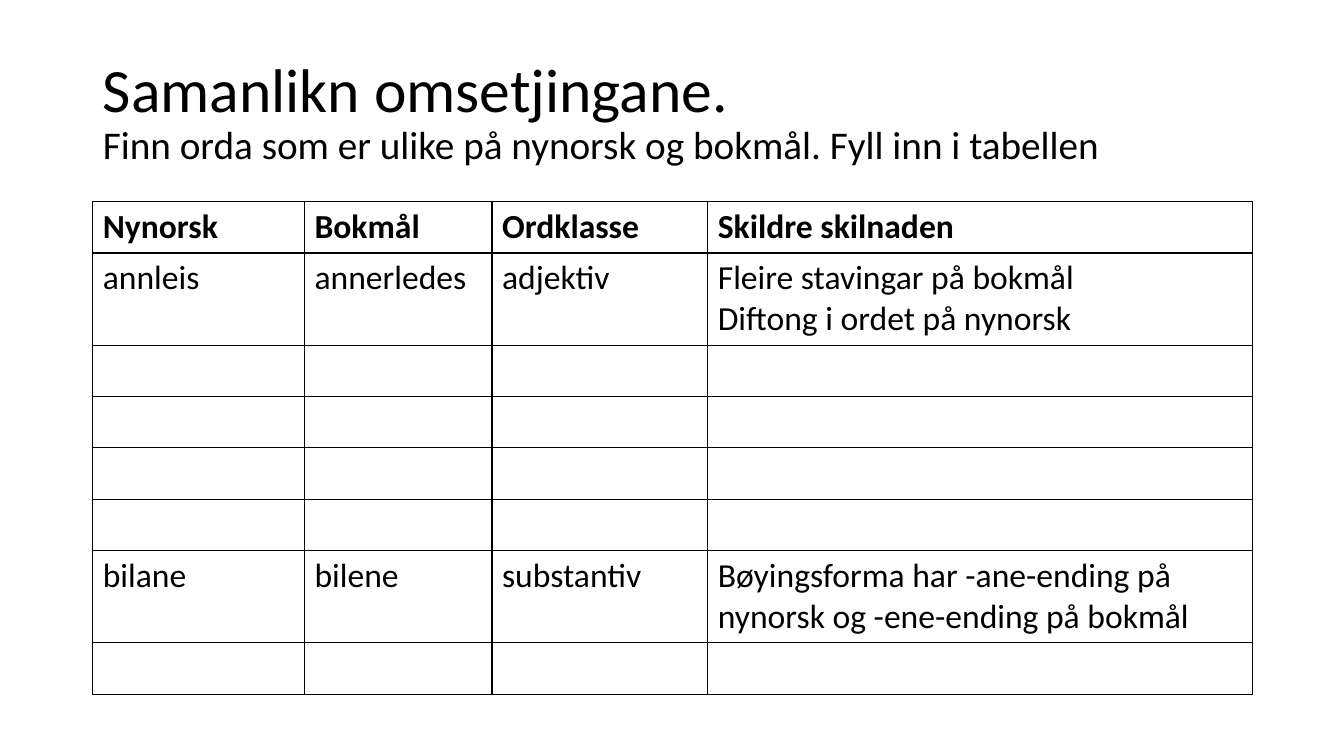
from dataclasses import dataclass

from lxml.etree import SubElement
from pptx import Presentation
from pptx.dml.color import RGBColor
from pptx.enum.text import MSO_ANCHOR, PP_ALIGN
from pptx.oxml.ns import qn
from pptx.slide import Slide
from pptx.table import _Cell
from pptx.text.text import _Paragraph
from pptx.util import Inches, Pt


@dataclass(frozen=True)
class Theme:
    font: str = "Calibri"
    ink: str = "000000"
    heading: int = 44
    instruction: int = 28
    entry: int = 24
    border: int = 1


@dataclass(frozen=True)
class WordRow:
    nynorsk: str = ""
    bokmal: str = ""
    word_class: str = ""
    difference: str = ""
    bold: bool = False
    height: float = 0.51

    def entries(self) -> tuple[str, ...]:
        return self.nynorsk, self.bokmal, self.word_class, self.difference


THEME = Theme()
COLUMN_WIDTHS = (2.1, 1.86, 2.14, 5.4)
LEFT, WIDTH = 0.92, sum(COLUMN_WIDTHS)
WORD_ROWS = [
    WordRow("Nynorsk", "Bokmål", "Ordklasse", "Skildre skilnaden", bold=True),
    WordRow("annleis", "annerledes", "adjektiv",
            "Fleire stavingar på bokmål\nDiftong i ordet på nynorsk", height=0.91),
    *[WordRow()] * 4,
    WordRow("bilane", "bilene", "substantiv",
            "Bøyingsforma har -ane-ending på nynorsk og -ene-ending på bokmål",
            height=0.91),
    WordRow(),
]


def style_paragraph(paragraph: _Paragraph, size: int, bold: bool = False) -> None:
    paragraph.alignment = PP_ALIGN.LEFT
    paragraph.font.name = THEME.font
    paragraph.font.size = Pt(size)
    paragraph.font.bold = bold
    paragraph.font.color.rgb = RGBColor.from_string(THEME.ink)


def draw_borders(cell: _Cell) -> None:
    properties = cell._tc.get_or_add_tcPr()
    for side in ("a:lnL", "a:lnR", "a:lnT", "a:lnB"):
        line = SubElement(properties, qn(side), w=str(Pt(THEME.border)))
        SubElement(SubElement(line, qn("a:solidFill")), qn("a:srgbClr"), val=THEME.ink)


def add_heading(slide: Slide) -> None:
    title = slide.shapes.title
    title.left, title.top = Inches(LEFT), Inches(0.4)
    title.width, title.height = Inches(WIDTH), Inches(1.45)
    title.text_frame.word_wrap = True
    title.text_frame.vertical_anchor = MSO_ANCHOR.MIDDLE
    paragraph = title.text_frame.paragraphs[0]
    style_paragraph(paragraph, THEME.heading)
    paragraph.line_spacing = 0.9
    paragraph.add_run().text = "Samanlikn omsetjingane. "
    paragraph.add_line_break()
    instruction = paragraph.add_run()
    instruction.text = "Finn orda som er ulike på nynorsk og bokmål. Fyll inn i tabellen"
    instruction.font.size = Pt(THEME.instruction)


def add_word_table(slide: Slide, rows: list[WordRow]) -> None:
    height = sum(row.height for row in rows)
    table = slide.shapes.add_table(
        len(rows), len(COLUMN_WIDTHS),
        Inches(LEFT), Inches(2), Inches(WIDTH), Inches(height),
    ).table
    table.first_row = table.horz_banding = False
    for column, width in zip(table.columns, COLUMN_WIDTHS):
        column.width = Inches(width)
    for table_row, word_row in zip(table.rows, rows):
        table_row.height = Inches(word_row.height)
        for cell, entry in zip(table_row.cells, word_row.entries()):
            cell.text = entry
            for paragraph in cell.text_frame.paragraphs:
                style_paragraph(paragraph, THEME.entry, word_row.bold)
            draw_borders(cell)
            cell.fill.background()


def main() -> None:
    presentation = Presentation()
    presentation.slide_width = Inches(13.33)
    presentation.slide_height = Inches(7.5)
    slide = presentation.slides.add_slide(presentation.slide_layouts.get_by_name("Title Only"))
    add_heading(slide)
    add_word_table(slide, WORD_ROWS)
    presentation.save("out.pptx")


if __name__ == "__main__":
    main()
